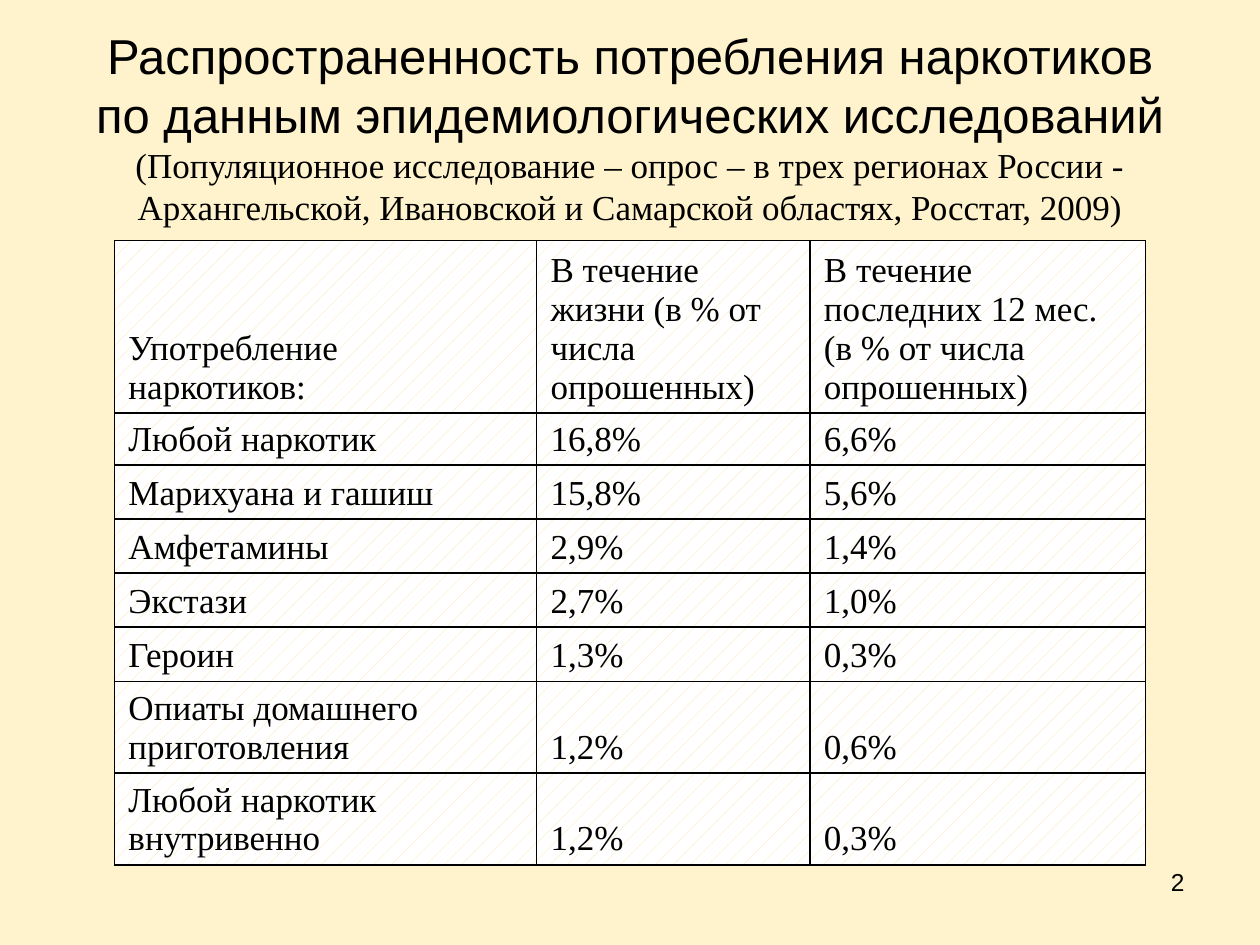
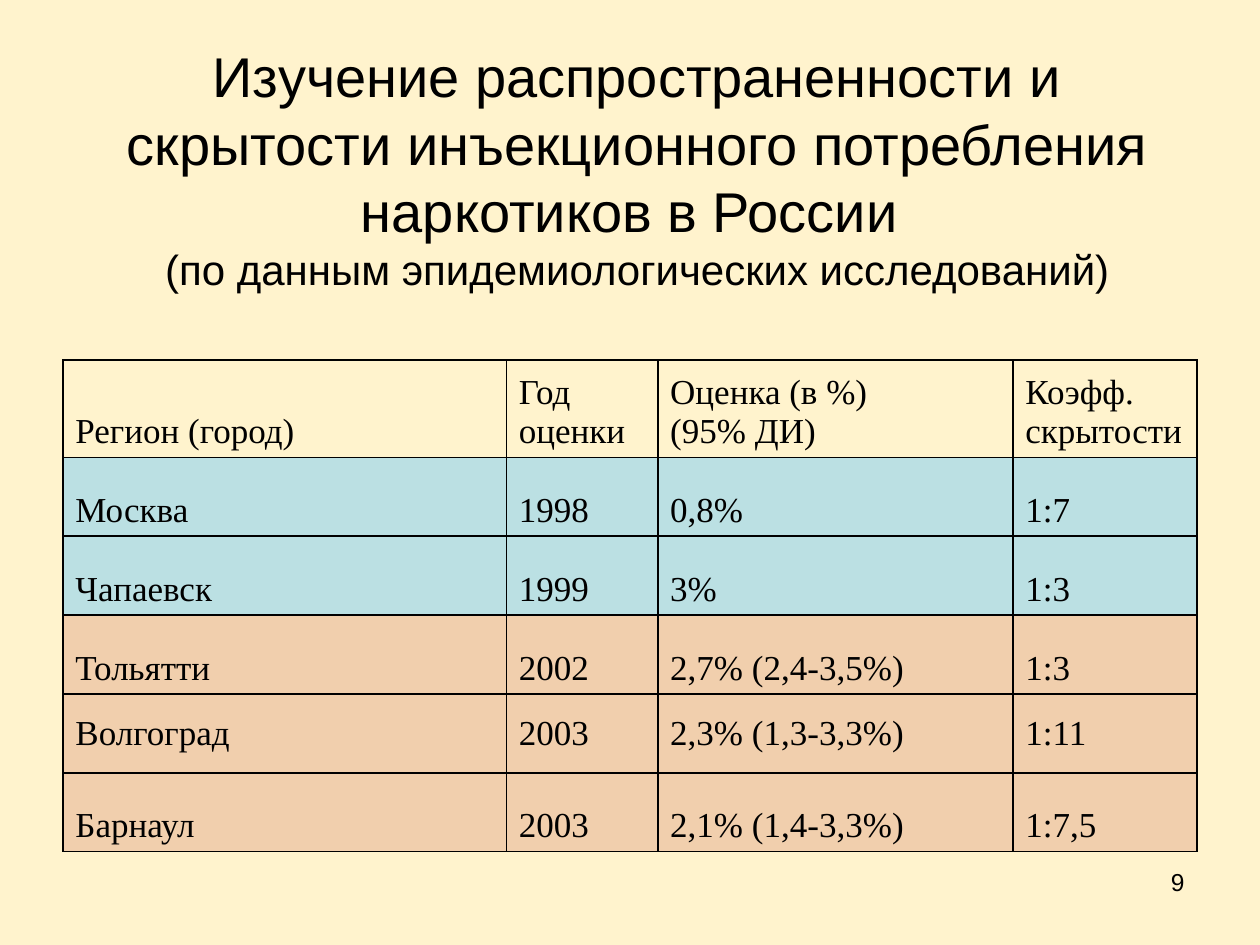
import dataclasses
import typing

import lxml.etree
import pptx
import pptx.dml.color
import pptx.enum.dml
import pptx.enum.text
import pptx.oxml.ns
import pptx.util

Cm = pptx.util.Cm
ALIGN = pptx.enum.text.PP_ALIGN
ANCHOR = pptx.enum.text.MSO_ANCHOR

SANS = "Arial"
SERIF = "Times New Roman"
BLACK = "000000"
CREAM = "FFF3CD"
HATCH = "FBE2A3"
WHITE = "FFFFFF"
BLUE = "BBE0E3"
PEACH = "F1CFAD"


@dataclasses.dataclass(frozen=True)
class Box:
    left: float
    top: float
    width: float
    height: float


@dataclasses.dataclass(frozen=True)
class Span:
    text: str
    size: int
    font: str = SANS
    new_line: bool = False


@dataclasses.dataclass(frozen=True)
class Row:
    height: float
    texts: tuple[str, ...]
    fill: str | None = None
    anchor: typing.Any = ANCHOR.BOTTOM


@dataclasses.dataclass(frozen=True)
class Grid:
    left: float
    top: float
    widths: tuple[float, ...]
    rows: tuple[Row, ...]
    side_margin: float


@dataclasses.dataclass(frozen=True)
class Page:
    number: str
    title_box: Box
    title: tuple[Span, ...]
    title_bottom: float
    grid: Grid


NUMBER_BOX = Box(18.21, 17.35, 5.92, 1.32)

PAGES = (
    Page(
        "2",
        Box(1.27, 0.76, 22.86, 4.39),
        (
            Span("Распространенность потребления наркотиков по данным "
                 "эпидемиологических исследований ", 28),
            Span("(Популяционное исследование – опрос – в трех регионах России - "
                 "Архангельской, Ивановской и Самарской областях, Росстат, 2009)",
                 20, SERIF),
        ),
        0.94,
        Grid(2.31, 4.85, (8.51, 5.51, 6.76), (
            Row(3.48, ("Употребление наркотиков:",
                       "В течение жизни (в % от числа опрошенных)",
                       "В течение последних 12 мес. (в % от числа опрошенных)"), HATCH),
            Row(1.04, ("Любой наркотик", "16,8%", "6,6%"), HATCH),
            Row(1.09, ("Марихуана и гашиш", "15,8%", "5,6%"), HATCH),
            Row(1.09, ("Амфетамины", "2,9%", "1,4%"), HATCH),
            Row(1.09, ("Экстази", "2,7%", "1,0%"), HATCH),
            Row(1.09, ("Героин", "1,3%", "0,3%"), HATCH),
            Row(1.85, ("Опиаты домашнего приготовления", "1,2%", "0,6%"), HATCH),
            Row(1.85, ("Любой наркотик внутривенно", "1,2%", "0,3%"), HATCH),
        ), 0.28),
    ),
    Page(
        "9",
        Box(1.57, 0.76, 22.56, 5.26),
        (
            Span("Изучение распространенности и скрытости инъекционного "
                 "потребления наркотиков в России ", 32),
            Span("(по данным эпидемиологических исследований)", 24, new_line=True),
        ),
        0.13,
        Grid(1.27, 7.26, (8.94, 3.05, 7.16, 3.71), (
            Row(1.96, ("Регион (город)", "Год оценки", "Оценка (в %)\n(95% ДИ)",
                       "Коэфф. скрытости")),
            Row(1.59, ("Москва", "1998", "0,8%", "1:7"), BLUE),
            Row(1.59, ("Чапаевск", "1999", "3%", "1:3"), BLUE),
            Row(1.59, ("Тольятти", "2002", "2,7% (2,4-3,5%)", "1:3"), PEACH),
            Row(1.59, ("Волгоград", "2003", "2,3% (1,3-3,3%)", "1:11"), PEACH,
                ANCHOR.MIDDLE),
            Row(1.59, ("Барнаул", "2003", "2,1% (1,4-3,3%)", "1:7,5"), PEACH),
        ), 0.25),
    ),
)


def rgb(value: str) -> pptx.dml.color.RGBColor:
    return pptx.dml.color.RGBColor.from_string(value)


def apply(target: typing.Any, values: dict[str, typing.Any]) -> None:
    for name, value in values.items():
        setattr(target, name, value)


def style_run(r: typing.Any, size: int, font: str) -> None:
    apply(r.font, {"size": pptx.util.Pt(size), "name": font, "bold": False})
    r.font.color.rgb = rgb(BLACK)


def add_text(s: typing.Any, box: Box, spans: tuple[Span, ...], align: typing.Any,
             anchor: typing.Any, bottom: float = 0.13) -> None:
    sp = s.shapes.add_textbox(Cm(box.left), Cm(box.top), Cm(box.width), Cm(box.height))
    tf = sp.text_frame
    apply(tf, {
        "word_wrap": True,
        "auto_size": pptx.enum.text.MSO_AUTO_SIZE.NONE,
        "vertical_anchor": anchor,
        "margin_bottom": Cm(bottom),
    })
    p = tf.paragraphs[0]
    p.alignment = align
    for span in spans:
        if span.new_line:
            p.add_line_break()
        r = p.add_run()
        r.text = span.text
        style_run(r, span.size, span.font)


def fill_cell(cell: typing.Any, color: str | None) -> None:
    if color is None:
        cell.fill.background()
    elif color == HATCH:
        cell.fill.patterned()
        cell.fill.pattern = pptx.enum.dml.MSO_PATTERN.PERCENT_5
        cell.fill.fore_color.rgb = rgb(HATCH)
        cell.fill.back_color.rgb = rgb(WHITE)
    else:
        cell.fill.solid()
        cell.fill.fore_color.rgb = rgb(color)


def border_cell(cell: typing.Any) -> None:
    qn = pptx.oxml.ns.qn
    props = cell._tc.get_or_add_tcPr()
    for i, side in enumerate(("a:lnL", "a:lnR", "a:lnT", "a:lnB")):
        line = lxml.etree.Element(qn(side), w=str(pptx.util.Pt(1)))
        paint = lxml.etree.SubElement(line, qn("a:solidFill"))
        lxml.etree.SubElement(paint, qn("a:srgbClr"), val=BLACK)
        props.insert(i, line)


def add_grid(s: typing.Any, grid: Grid) -> None:
    height = sum(row.height for row in grid.rows)
    table = s.shapes.add_table(len(grid.rows), len(grid.widths), Cm(grid.left),
                               Cm(grid.top), Cm(sum(grid.widths)), Cm(height)).table
    apply(table, {"first_row": False, "horz_banding": False})
    for column, width in zip(table.columns, grid.widths):
        column.width = Cm(width)
    for line, row in zip(table.rows, grid.rows):
        line.height = Cm(row.height)
        for cell, text in zip(line.cells, row.texts):
            apply(cell, {
                "text": text,
                "vertical_anchor": row.anchor,
                "margin_left": Cm(grid.side_margin),
                "margin_right": Cm(grid.side_margin),
                "margin_top": Cm(0.13),
                "margin_bottom": Cm(0.13),
            })
            for p in cell.text_frame.paragraphs:
                for r in p.runs:
                    style_run(r, 20, SERIF)
            fill_cell(cell, row.fill)
            border_cell(cell)


def add_page(prs: typing.Any, page: Page) -> None:
    s = prs.slides.add_slide(prs.slide_layouts[6])
    s.background.fill.solid()
    s.background.fill.fore_color.rgb = rgb(CREAM)
    add_text(s, NUMBER_BOX, (Span(page.number, 14),), ALIGN.RIGHT, ANCHOR.TOP)
    add_text(s, page.title_box, page.title, ALIGN.CENTER, ANCHOR.MIDDLE,
             page.title_bottom)
    add_grid(s, page.grid)


def main() -> None:
    prs = pptx.Presentation()
    apply(prs, {"slide_width": Cm(25.4), "slide_height": Cm(19.05)})
    for page in PAGES:
        add_page(prs, page)
    prs.save("out.pptx")


if __name__ == "__main__":
    main()
